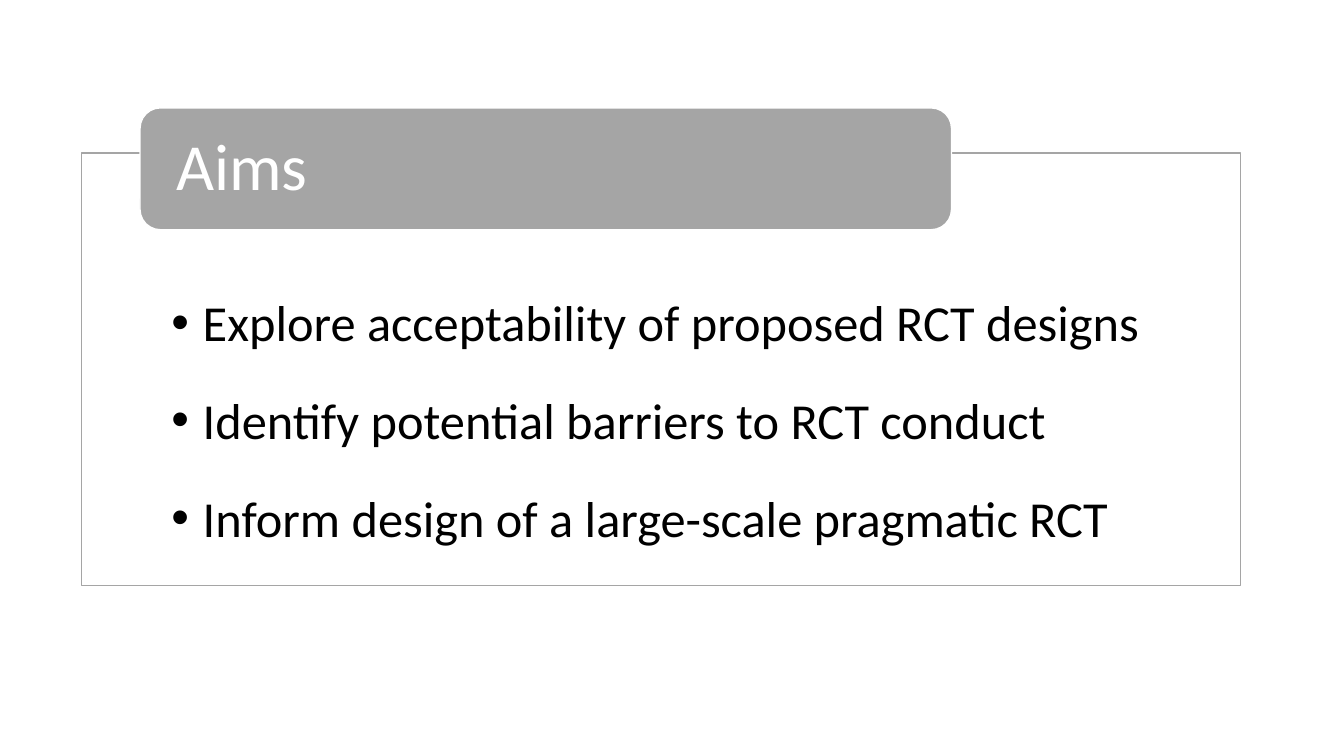
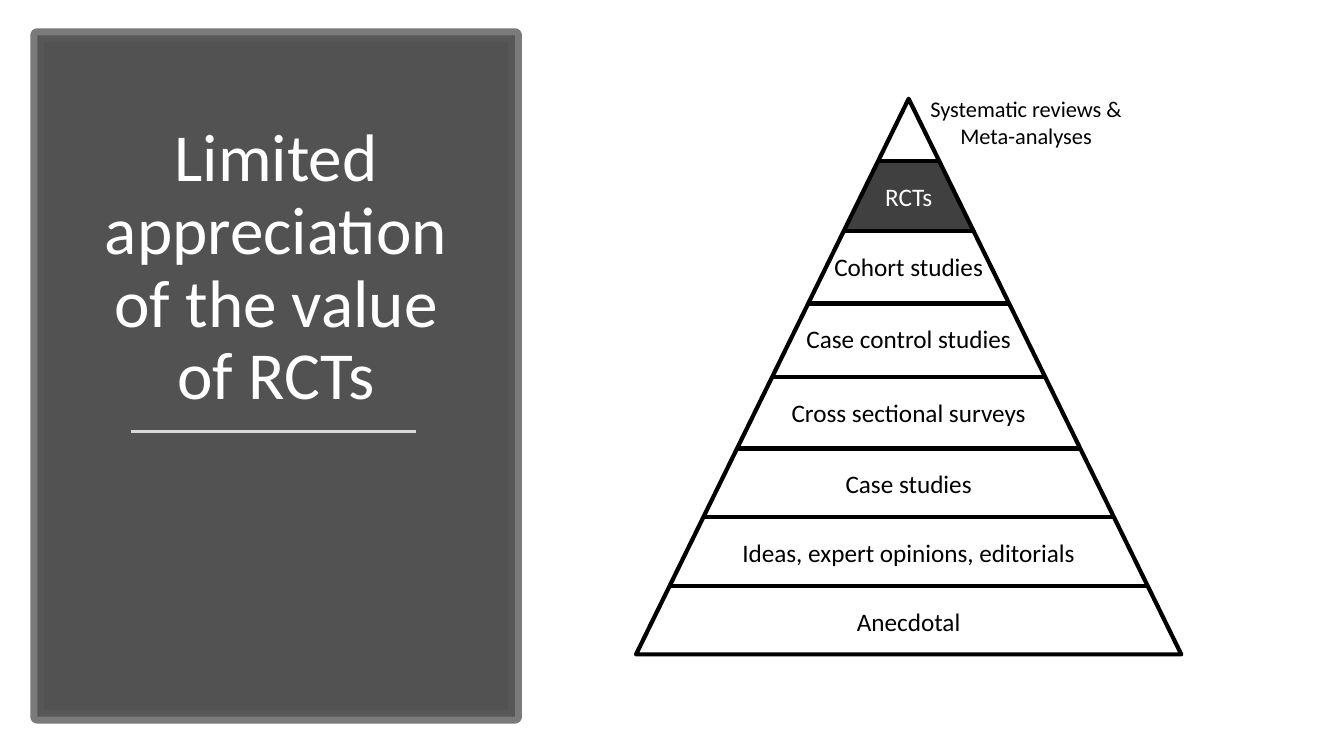
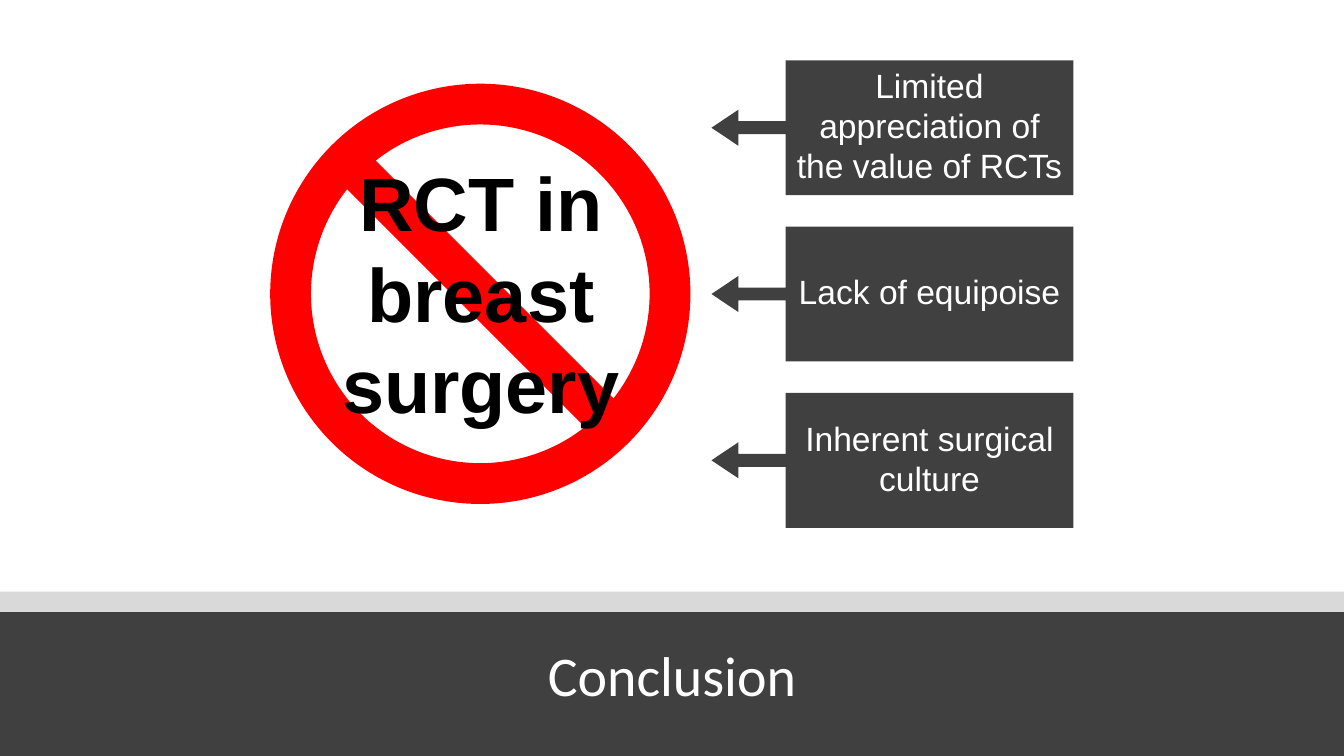
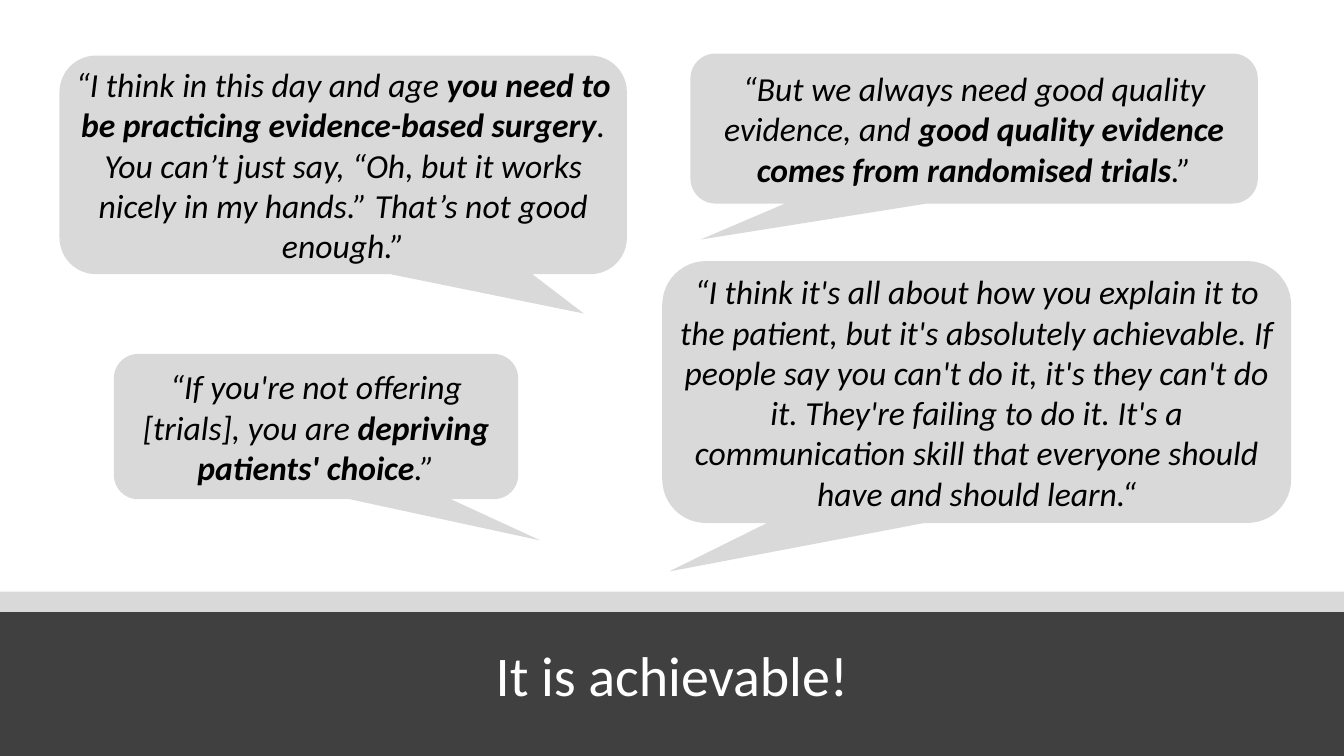
from typing import NamedTuple, Optional

from lxml.etree import SubElement
from pptx import Presentation
from pptx.dml.color import RGBColor
from pptx.enum.shapes import MSO_CONNECTOR, MSO_SHAPE
from pptx.enum.text import MSO_ANCHOR, MSO_AUTO_SIZE, PP_ALIGN
from pptx.oxml.ns import qn
from pptx.util import Cm, Pt

COLORS = {
    "white": "FFFFFF", "black": "000000", "red": "FF0000",
    "dark": "404040", "frame": "595959", "gray": "A5A5A5", "light": "D9D9D9",
}
SLIDE_WIDTH, SLIDE_HEIGHT = 33.87, 19.05
BODY_FONT, SIGN_FONT = "Calibri", "Arial"


class Box(NamedTuple):
    """Left, top, width and height in centimetres."""
    left: float
    top: float
    width: float
    height: float

    def lengths(self) -> list:
        return [Cm(value) for value in self]


class TextStyle(NamedTuple):
    size: float
    color: str = "black"
    font: str = BODY_FONT
    bold: Optional[bool] = None
    italic: Optional[bool] = None
    align: PP_ALIGN = PP_ALIGN.CENTER
    spacing: float = 1.0


class Level(NamedTuple):
    """A pyramid level below the tip, with the height of its upper edge."""
    label: str
    top: float
    color: str = "black"


class Quote(NamedTuple):
    box: Box
    tail: tuple
    phrases: tuple  # plain and bold text in turn
    side_margin: float = 0


BAND = Box(0, 14.94, SLIDE_WIDTH, SLIDE_HEIGHT - 14.94)
STRIP = Box(0, 14.91, SLIDE_WIDTH, 0.51)

AIMS = (
    "Explore acceptability of proposed RCT designs",
    "Identify potential barriers to RCT conduct",
    "Inform design of a large-scale pragmatic RCT",
)
PYRAMID = Box(16.03, 2.49, 13.74, 14)
LEVELS = (
    Level("RCTs", 4.06, "white"),
    Level("Cohort studies", 5.82),
    Level("Case control studies", 7.65),
    Level("Cross sectional surveys", 9.5),
    Level("Case studies", 11.3),
    Level("Ideas, expert opinions, editorials", 13.03),
    Level("Anecdotal", 14.76),
)
BARRIERS = (
    "Limited appreciation of the value of RCTs",
    "Lack of equipoise",
    "Inherent surgical culture",
)
QUOTES = (
    Quote(Box(17.4, 1.35, 14.3, 3.78), (-0.482, 0.74),
          ("“But we always need good quality evidence, and ",
           "good quality evidence comes from randomised trials", ".”")),
    Quote(Box(16.69, 6.58, 15.85, 6.6), (-0.489, 0.685),
          ("“I think it's all about how you explain it to the patient, but it's "
           "absolutely achievable. If people say you can't do it, it's they can't "
           "do it. They're failing to do it. It's a communication skill that "
           "everyone should have and should learn.“",)),
    Quote(Box(2.87, 8.92, 10.19, 3.66), (0.555, 0.784),
          ("“If you're not offering [trials], you are ",
           "depriving patients' choice", ".”"), side_margin=0.48),
    Quote(Box(1.5, 1.4, 14.3, 5.51), (0.424, 0.68),
          ("“I think in this day and age ",
           "you need to be practicing evidence-based surgery",
           ". You can’t just say, “Oh, but it works nicely in my hands.” "
           "That’s not good enough.”")),
)


# Shared drawing functions
def rgb(name: str) -> RGBColor:
    return RGBColor.from_string(COLORS[name])


def add_shape(slide, kind: MSO_SHAPE, box: Box, fill: Optional[str] = None,
              line: Optional[str] = None, weight: float = 1, adjustments: tuple = ()):
    shape = slide.shapes.add_shape(kind, *box.lengths())
    shape.shadow.inherit = False
    if fill:
        shape.fill.solid()
        shape.fill.fore_color.rgb = rgb(fill)
    else:
        shape.fill.background()
    if line:
        shape.line.color.rgb = rgb(line)
        shape.line.width = Pt(weight)
    else:
        shape.line.fill.background()
    for index, value in enumerate(adjustments):
        shape.adjustments[index] = value
    return shape


def add_line(slide, left: float, right: float, y: float, color: str, weight: float) -> None:
    line = slide.shapes.add_connector(
        MSO_CONNECTOR.STRAIGHT, Cm(left), Cm(y), Cm(right), Cm(y))
    line.line.color.rgb = rgb(color)
    line.line.width = Pt(weight)
    SubElement(line.element.spPr, qn("a:effectLst"))


def set_opacity(parent, percent: int) -> None:
    """Make the solid fill directly under parent (spPr or ln) translucent."""
    color = parent.find(qn("a:solidFill")).find(qn("a:srgbClr"))
    SubElement(color, qn("a:alpha")).set("val", str(percent * 1000))


def style_paragraph(paragraph, style: TextStyle) -> None:
    paragraph.alignment = style.align
    paragraph.line_spacing = style.spacing
    font = paragraph.font
    font.name, font.size = style.font, Pt(style.size)
    font.bold, font.italic = style.bold, style.italic
    font.color.rgb = rgb(style.color)


def write(shape, lines: tuple, style: TextStyle, anchor: MSO_ANCHOR = MSO_ANCHOR.TOP,
          margins: tuple = (0.25, 0.13, 0.25, 0.13)):
    """Fill a shape with one paragraph per line; margins run left, top, right, bottom."""
    frame = shape.text_frame
    frame.word_wrap = True
    frame.auto_size = MSO_AUTO_SIZE.NONE
    frame.vertical_anchor = anchor
    (frame.margin_left, frame.margin_top,
     frame.margin_right, frame.margin_bottom) = [Cm(value) for value in margins]
    frame.text = "\n".join(lines)
    for paragraph in frame.paragraphs:
        style_paragraph(paragraph, style)
    return frame


def add_text(slide, box: Box, lines: tuple, style: TextStyle) -> None:
    write(slide.shapes.add_textbox(*box.lengths()), lines, style)


def place_title(slide, text: str, box: Box, style: TextStyle,
                anchor: MSO_ANCHOR = MSO_ANCHOR.MIDDLE, side_margin: float = 0.25):
    """Format the title and bring it in front of what is drawn so far."""
    title = slide.shapes.title
    title.left, title.top, title.width, title.height = box.lengths()
    write(title, (text,), style, anchor, (side_margin, 0.13, side_margin, 0.13))
    slide.shapes.element.append(title.element)
    return title


def add_title_band(slide, text: str) -> None:
    band = place_title(slide, text, BAND, TextStyle(40, "white"))
    band.fill.solid()
    band.fill.fore_color.rgb = rgb("dark")
    add_shape(slide, MSO_SHAPE.RECTANGLE, STRIP, "light")


def add_bullet(paragraph, indent: float) -> None:
    properties = paragraph._p.get_or_add_pPr()
    properties.set("marL", str(Cm(indent)))
    properties.set("indent", str(-Cm(indent)))
    bullet_font = properties.makeelement(qn("a:buFont"), {"typeface": "Arial"})
    bullet = properties.makeelement(qn("a:buChar"), {"char": "•"})
    default_run = properties.find(qn("a:defRPr"))
    default_run.addprevious(bullet_font)
    default_run.addprevious(bullet)


# Slides
def build_aims(slide) -> None:
    panel = add_shape(slide, MSO_SHAPE.RECTANGLE, Box(2.06, 3.86, 29.21, 10.9),
                      "white", "gray")
    frame = write(panel, AIMS, TextStyle(36, align=PP_ALIGN.LEFT, spacing=1.5),
                  margins=(2.26, 2.72, 2.26, 0.71))
    for paragraph in frame.paragraphs:
        paragraph.space_after = Pt(5)
        add_bullet(paragraph, 0.79)
    add_shape(slide, MSO_SHAPE.ROUNDED_RECTANGLE, Box(3.53, 2.72, 20.45, 3.07),
              "gray", "white")
    place_title(slide, "Aims", Box(3.68, 2.87, 20.14, 2.77),
                TextStyle(47, "white", align=PP_ALIGN.LEFT, spacing=0.9), side_margin=0.76)


def build_pyramid(slide) -> None:
    # Title panel
    panel = add_shape(slide, MSO_SHAPE.RECTANGLE, Box(0.94, 0.89, 12.04, 17.17),
                      "dark", "frame", 10)
    properties = panel.element.spPr
    set_opacity(properties, 90)
    set_opacity(properties.find(qn("a:ln")), 80)
    place_title(slide, "Limited appreciation of the value of RCTs",
                Box(1.88, 2.54, 10.16, 8.03), TextStyle(48, "white", spacing=0.9),
                MSO_ANCHOR.BOTTOM)
    add_line(slide, 3.3, 10.49, 10.87, "light", 1.75)

    # Pyramid with the RCT level shaded
    add_shape(slide, MSO_SHAPE.TRAPEZOID, Box(21.31, 4.06, 3.23, 1.75), "dark",
              adjustments=(0.479,))
    add_shape(slide, MSO_SHAPE.ISOSCELES_TRIANGLE, PYRAMID, line="black", weight=3)
    axis = PYRAMID.left + PYRAMID.width / 2
    label_width = 9.2
    for level in LEVELS:
        half = PYRAMID.width / 2 * (level.top - PYRAMID.top) / PYRAMID.height
        add_line(slide, axis - half, axis + half, level.top, "black", 3)
        add_text(slide, Box(axis - label_width / 2, level.top + 0.38, label_width, 1.02),
                 (level.label,), TextStyle(18, level.color))
    add_text(slide, Box(23.09, 2.26, 5.54, 1.63),
             ("Systematic reviews &", "Meta-analyses"), TextStyle(16))


def build_conclusion(slide) -> None:
    add_title_band(slide, "Conclusion")
    add_shape(slide, MSO_SHAPE.NO_SYMBOL, Box(6.81, 2.11, 10.59, 10.59), "red",
              adjustments=(0.097,))
    add_text(slide, Box(7.98, 3.81, 8.28, 7.19), ("RCT in breast", "surgery"),
             TextStyle(54, font=SIGN_FONT, bold=True))
    for row, barrier in enumerate(BARRIERS):
        callout = add_shape(slide, MSO_SHAPE.LEFT_ARROW_CALLOUT,
                            Box(17.93, 1.52 + 4.19 * row, 9.12, 3.4), "dark",
                            adjustments=(0.096, 0.134, 0.2, 0.795))
        write(callout, (barrier,), TextStyle(24, "white", SIGN_FONT),
              MSO_ANCHOR.MIDDLE, (0.25, 0, 0.25, 0.13))


def build_quotes(slide) -> None:
    add_title_band(slide, "It is achievable!")
    for quote in QUOTES:
        bubble = add_shape(slide, MSO_SHAPE.ROUNDED_RECTANGULAR_CALLOUT, quote.box,
                           "light", adjustments=(*quote.tail, 0.167))
        frame = write(bubble, ("",), TextStyle(24, italic=True), MSO_ANCHOR.MIDDLE,
                      (quote.side_margin, 0, quote.side_margin, 0))
        for index, phrase in enumerate(quote.phrases):
            run = frame.paragraphs[0].add_run()
            run.text = phrase
            if index % 2:
                run.font.bold = True


def main() -> None:
    presentation = Presentation()
    presentation.slide_width = Cm(SLIDE_WIDTH)
    presentation.slide_height = Cm(SLIDE_HEIGHT)
    title_only = presentation.slide_layouts[5]
    for build in (build_aims, build_pyramid, build_conclusion, build_quotes):
        build(presentation.slides.add_slide(title_only))
    presentation.save("out.pptx")


if __name__ == "__main__":
    main()
